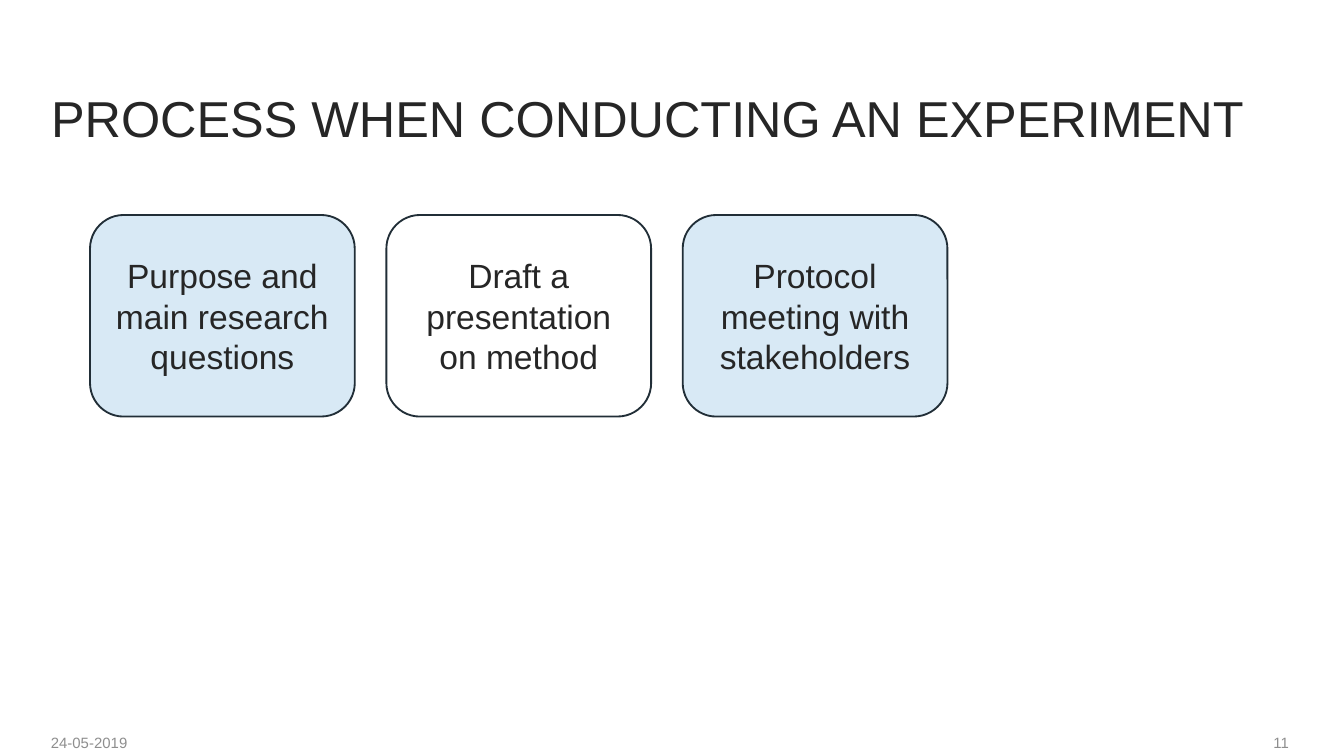
"""Build a slide with the first steps of conducting an experiment."""
import pptx
import pptx.util
import pptx.dml.color
import pptx.enum.shapes
import pptx.enum.text

Inches = pptx.util.Inches
Align = pptx.enum.text.PP_ALIGN
Anchor = pptx.enum.text.MSO_ANCHOR

COLORS = {"text": "262626", "footer": "8E8E8E", "step": "D8E9F5", "outline": "212E37"}


def color(name):
    return pptx.dml.color.RGBColor.from_string(COLORS[name])


def write(box, text, *, size, ink="text", align=Align.LEFT, anchor=Anchor.TOP,
          margins=(0.1, 0.05, 0.1, 0.05)):
    frame = box.text_frame
    frame.word_wrap = True
    frame.auto_size = pptx.enum.text.MSO_AUTO_SIZE.NONE
    frame.vertical_anchor = anchor
    (frame.margin_left, frame.margin_top,
     frame.margin_right, frame.margin_bottom) = map(Inches, margins)
    para = frame.paragraphs[0]
    para.alignment = align
    span = para.add_run()
    span.text = text
    span.font.name = "Arial"
    span.font.size = pptx.util.Pt(size)
    span.font.color.rgb = color(ink)


deck = pptx.Presentation()
deck.slide_width = Inches(10)
deck.slide_height = deck.slide_width * 9 // 16
page = deck.slides.add_slide(deck.slide_layouts[5])

title = page.shapes.title
title.left, title.top, title.width, title.height = map(Inches, (0.28, 0.22, 9.45, 0.93))
write(title, "PROCESS WHEN CONDUCTING AN EXPERIMENT", size=27, anchor=Anchor.BOTTOM)

steps = [
    ("Purpose and main research questions", True),
    ("Draft a presentation on method", False),
    ("Protocol meeting with stakeholders", True),
]
first_left, last_left = 0.67, 5.08
column_pitch = (last_left - first_left) / (len(steps) - 1)
for column, (label, filled) in enumerate(steps):
    step = page.shapes.add_shape(
        pptx.enum.shapes.MSO_SHAPE.ROUNDED_RECTANGLE,
        Inches(first_left + column * column_pitch), Inches(1.6), Inches(1.97), Inches(1.5))
    step.shadow.inherit = False
    if filled:
        step.fill.solid()
        step.fill.fore_color.rgb = color("step")
    else:
        step.fill.background()
    step.line.color.rgb = color("outline")
    step.line.width = pptx.util.Pt(1)
    write(step, label, size=18, align=Align.CENTER, anchor=Anchor.MIDDLE)

for left, text, align in [(0.28, "24-05-2019", Align.LEFT), (7.36, "11", Align.RIGHT)]:
    footer = page.shapes.add_textbox(Inches(left), Inches(5.46), Inches(2.33), Inches(0.4))
    write(footer, text, size=8, ink="footer", align=align, margins=(0.1, 0, 0.1, 0.04))

deck.save("out.pptx")
